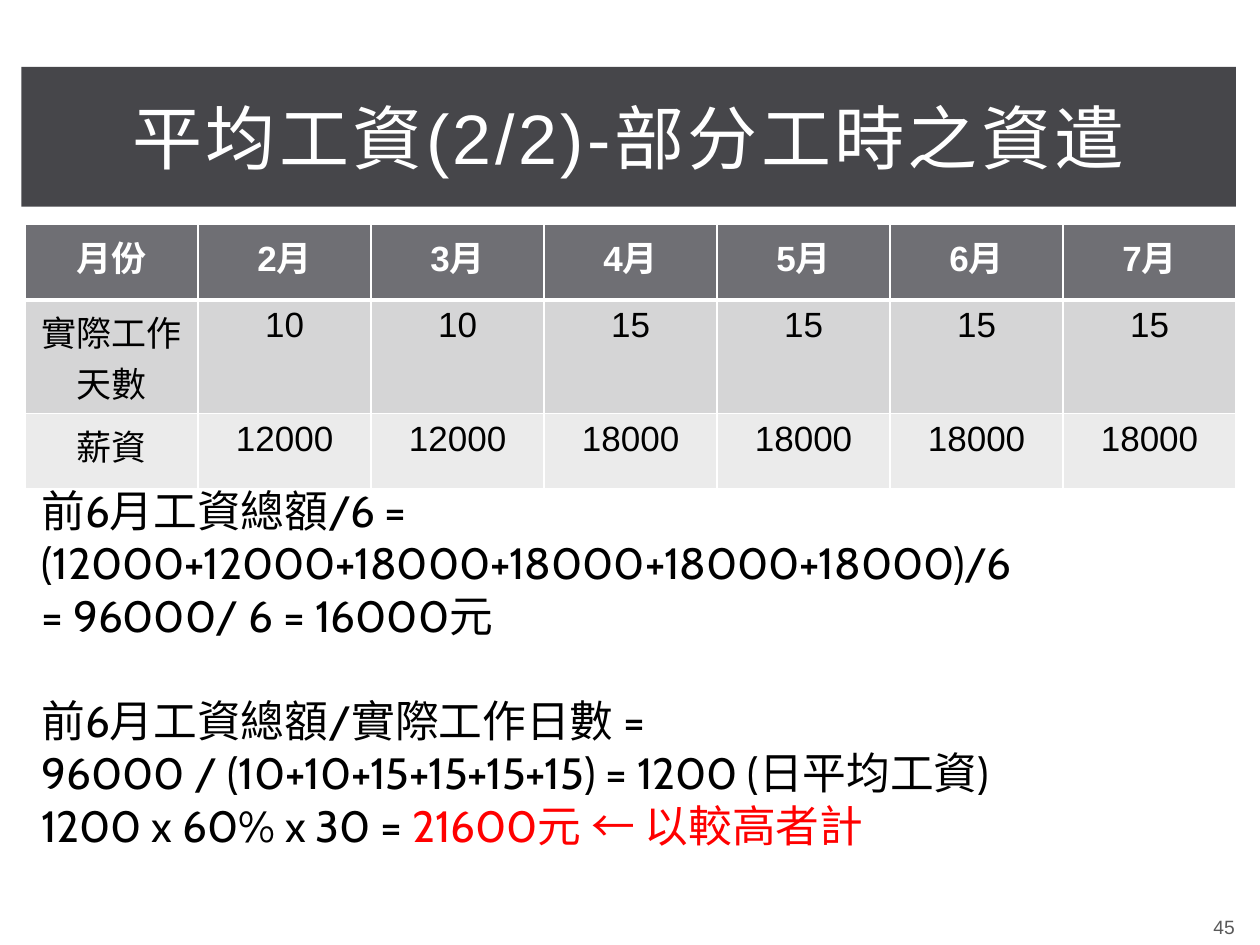
from lxml import etree
from pptx import Presentation
from pptx.dml.color import RGBColor
from pptx.enum.shapes import MSO_SHAPE
from pptx.enum.text import MSO_ANCHOR, PP_ALIGN
from pptx.oxml.ns import qn
from pptx.util import Inches, Pt

RECT = MSO_SHAPE.RECTANGLE
CENTER, LEFT = PP_ALIGN.CENTER, PP_ALIGN.LEFT
MIDDLE, TOP = MSO_ANCHOR.MIDDLE, MSO_ANCHOR.TOP

COLORS = {
    "banner": "46464A", "header": "6F6F74", "days": "D5D5D6", "pay": "EBEBEB",
    "white": "FFFFFF", "black": "000000", "grey": "595959", "red": "FF0000",
}
WAGES = [
    ["月份", "2月", "3月", "4月", "5月", "6月", "7月"],
    ["實際工作天數", "10", "10", "15", "15", "15", "15"],
    ["薪資", "12000", "12000", "18000", "18000", "18000", "18000"],
]
ROW_FILLS = ["header", "days", "pay"]
ROW_HEIGHTS = [0.6, 0.9, 0.6]
# Each formula: space before in points, then (text, colour) runs
FORMULAS = [
    (0, [("前6月工資總額/6 = (12000+12000+18000+18000+18000+18000)/6", "black")]),
    (0, [("= 96000/ 6 = 16000元", "black")]),
    (30, [("前6月工資總額/實際工作日數 =", "black")]),
    (0, [("96000 / (10+10+15+15+15+15) = 1200 (日平均工資)", "black")]),
    (0, [("1200 x 60% x 30 = ", "black"), ("21600元 ← 以較高者計", "red")]),
]


def rgb(name):
    return RGBColor.from_string(COLORS[name])


def add_run(p, text, size, color, font="Arial", bold=False):
    r = p.add_run()
    r.text = text
    r.font.name, r.font.size, r.font.bold = font, Pt(size), bold
    r.font.color.rgb = rgb(color)
    return r


def add_text_box(s, box, anchor):
    tf = s.shapes.add_textbox(*map(Inches, box)).text_frame
    tf.word_wrap = True
    tf.vertical_anchor = anchor
    return tf


def add_banner(s):
    sp = s.shapes.add_shape(RECT, *map(Inches, (0.17, 0.53, 9.64, 1.11)))
    sp.shadow.inherit = False
    sp.fill.solid()
    sp.fill.fore_color.rgb = rgb("banner")
    sp.line.fill.background()


def add_label(s, box, text, size, color, spacing=0):
    """Centred one-line text; spacing is the letter spacing in points."""
    p = add_text_box(s, box, MIDDLE).paragraphs[0]
    p.alignment = CENTER
    r = add_run(p, text, size, color)
    if spacing:
        r.font._element.set("spc", str(spacing * 100))


def set_borders(cell, bottom):
    """White 1 pt borders, with a chosen width at the bottom."""
    tc_pr = cell._tc.get_or_add_tcPr()
    widths = {"a:lnL": 1, "a:lnR": 1, "a:lnT": 1, "a:lnB": bottom}
    for i, (tag, width) in enumerate(widths.items()):
        ln = etree.Element(qn(tag), w=str(Pt(width)))
        fill = etree.SubElement(ln, qn("a:solidFill"))
        etree.SubElement(fill, qn("a:srgbClr"), val=COLORS["white"])
        tc_pr.insert(i, ln)


def add_wage_table(s):
    box = (0.2, 1.78, 9.61, sum(ROW_HEIGHTS))
    table = s.shapes.add_table(len(WAGES), len(WAGES[0]), *map(Inches, box)).table
    for i, (values, fill) in enumerate(zip(WAGES, ROW_FILLS)):
        header = i == 0
        table.rows[i].height = Inches(ROW_HEIGHTS[i])
        for j, value in enumerate(values):
            cell = table.cell(i, j)
            cell.fill.solid()
            cell.fill.fore_color.rgb = rgb(fill)
            set_borders(cell, 3 if header else 1)
            p = cell.text_frame.paragraphs[0]
            p.alignment = CENTER
            add_run(p, value, 20, "white" if header else "black", bold=header)


def add_formulas(s):
    tf = add_text_box(s, (0.23, 3.79, 9.61, 3.4), TOP)
    for i, (gap, runs) in enumerate(FORMULAS):
        p = tf.add_paragraph() if i else tf.paragraphs[0]
        p.alignment = LEFT
        if gap:
            p.space_before = Pt(gap)
        for text, color in runs:
            add_run(p, text, 25, color, "Cabin")


def main():
    prs = Presentation()
    prs.slide_width, prs.slide_height = Inches(10), Inches(7.5)
    s = prs.slides.add_slide(prs.slide_layouts[6])
    add_banner(s)
    add_label(s, (0.49, 0.67, 9, 0.82), "平均工資(2/2)-部分工時之資遣", 40, "white", 2)
    add_label(s, (9.43, 7.21, 0.57, 0.29), "45", 11, "grey")
    add_wage_table(s)
    add_formulas(s)
    prs.save("out.pptx")


if __name__ == "__main__":
    main()
